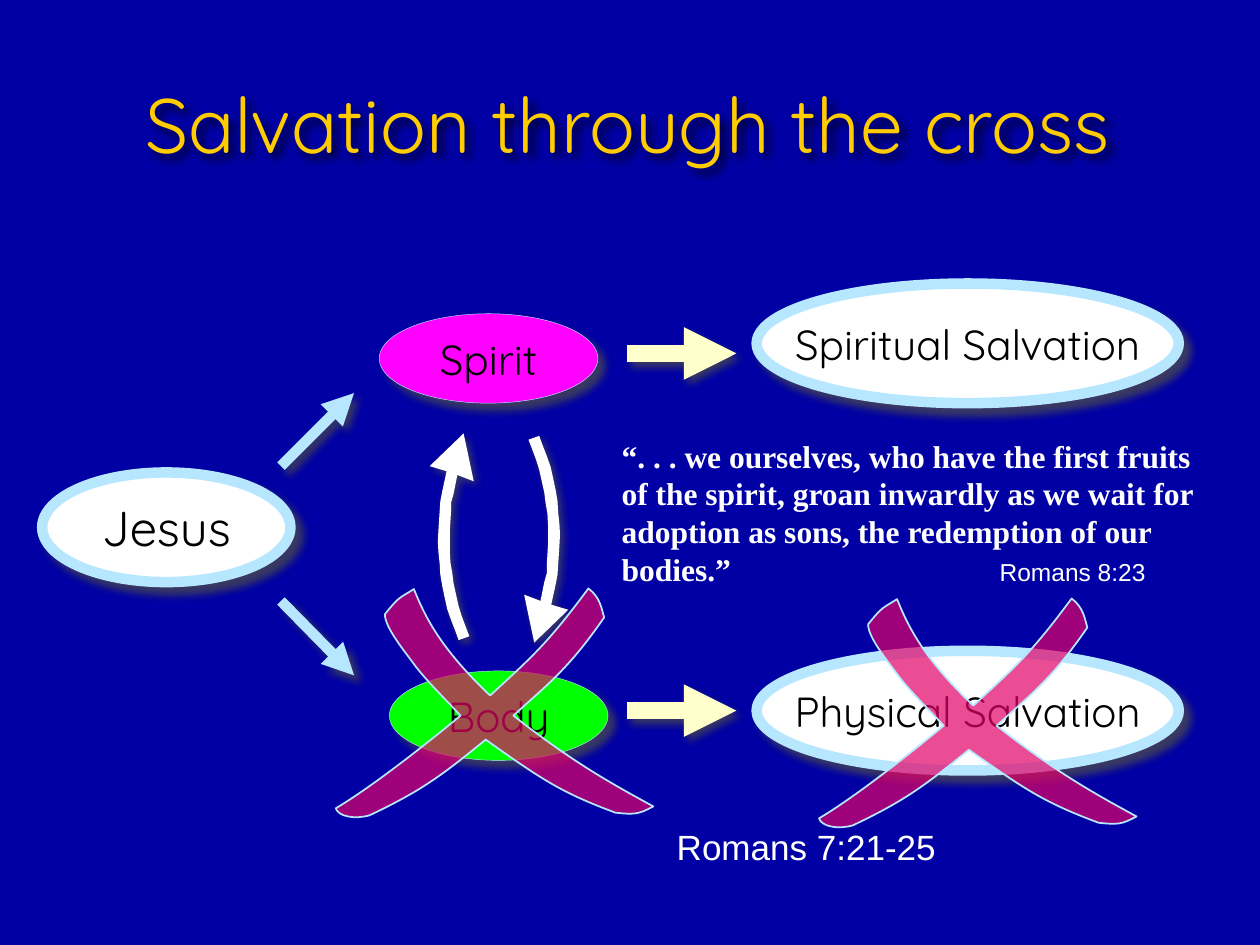
from lxml.etree import SubElement
from pptx import Presentation
from pptx.dml.color import RGBColor
from pptx.enum.shapes import MSO_CONNECTOR, MSO_SHAPE
from pptx.enum.text import MSO_ANCHOR, MSO_AUTO_SIZE, PP_ALIGN
from pptx.oxml.ns import qn
from pptx.util import Inches, Pt

COLUMNS, ROWS = 100, 75
CELL = Inches(0.1)
SKY, WHITE, CREAM, BLACK = "B7E7FF", "FFFFFF", "FFFFCC", "000000"
ROUND_FONT = "Quicksand"

ARROW_OUTLINE = [
    (36.3, 37.7), (36, 39.2), (35.8, 39.9), (35.8, 40.6), (35.7, 42.2), (35.7, 43.7),
    (35.75, 44.65), (35.9, 45.5), (36, 46.3), (36.2, 47.2), (36.4, 48.1), (36.65, 48.9),
    (36.95, 49.7), (37.25, 50.5), (36.4, 50.8), (36.15, 50.1), (35.8, 49.2), (35.5, 48.35),
    (35.3, 47.45), (35.1, 46.5), (34.95, 45.6), (34.9, 44.75), (34.8, 43.8), (34.75, 43),
    (34.8, 42.1), (34.9, 40.5), (34.95, 39.8), (35.1, 39), (35.45, 37.4), (34.1, 37),
    (36.8, 34.4), (37.6, 38.2),
]
CROSS_OUTLINE = [
    (9.9, 10.1),
    (9.9, 10.1), (3.8, 15.2), (0, 17.45), (0.2, 18.1), (1.5, 18.35), (2.7, 18),
    (6.8, 16.05), (8.35, 14.9), (11.9, 12), (16.4, 15.2), (17.9, 16.2), (22.2, 17.8),
    (23.7, 17.95), (24, 17.95), (25.2, 17.3), (22, 15.55), (18.95, 13.9), (14.1, 10.1),
    (16.5, 7.85), (18.35, 6.6), (21.3, 2.3), (21.1, 1.65), (21, 0.7), (20.05, 0),
    (16.8, 4.4), (15.5, 5.5), (12.25, 8.5), (8.35, 4.8), (7.1, 2.3), (6.2, 0.05),
    (5.05, 0.8), (5.1, 0.55), (3.9, 2.05), (3.9, 3.1), (5.4, 4.9), (6.35, 6.2),
    (7.35, 7.5), (9.2, 9.3), (9.9, 10.1),
]


def span(cells):
    """Turn grid cells into a length."""
    return round(cells * CELL)


def colour(hex_value):
    """Turn a hex string into a colour."""
    return RGBColor.from_string(hex_value)


def paint(fill, hex_value):
    """Fill solidly with one colour."""
    fill.solid()
    fill.fore_color.rgb = colour(hex_value)


def set_alpha(parent, percent):
    """Add an opacity to a colour element."""
    SubElement(parent, qn("a:alpha"), val=str(percent * 1000))


def cast_shadow(owner, distance, angle=45, tint="4D4D4D"):
    """Give a shape or connector a soft outer shadow."""
    effects = SubElement(owner._element.spPr, qn("a:effectLst"))
    outer = SubElement(effects, qn("a:outerShdw"), blurRad=str(Pt(5)), dist=str(Pt(distance)),
                       dir=str(angle * 60000), algn="ctr", rotWithShape="0")
    set_alpha(SubElement(outer, qn("a:srgbClr"), val=tint), 75)


def write(paragraph, wording, hex_value, **formats):
    """Add a run with the given font values."""
    run = paragraph.add_run()
    run.text = wording
    run.font.color.rgb = colour(hex_value)
    for key, value in formats.items():
        setattr(run.font, key, value)


def text_box(slide, area, **formats):
    """Add a text box and return it with its first paragraph."""
    box = slide.shapes.add_textbox(*map(span, area))
    for key, value in formats.items():
        setattr(box.text_frame, key, value)
    return box, box.text_frame.paragraphs[0]


def bubble(slide, wording, area, size=24, fill=WHITE, border=6):
    """Add a labelled ellipse."""
    ellipse = slide.shapes.add_shape(MSO_SHAPE.OVAL, *map(span, area))
    paint(ellipse.fill, fill)
    paint(ellipse.line.fill, SKY)
    ellipse.line.width = Pt(border)
    cast_shadow(ellipse, 5.7)
    frame = ellipse.text_frame
    frame.word_wrap = False
    frame.vertical_anchor = MSO_ANCHOR.MIDDLE
    frame.paragraphs[0].alignment = PP_ALIGN.CENTER
    write(frame.paragraphs[0], wording, BLACK, size=Pt(size), name=ROUND_FONT)


def straight_arrow(slide, ends, hex_value, width, distance, angle=45):
    """Add a line with an arrowhead at its end."""
    arrow = slide.shapes.add_connector(MSO_CONNECTOR.STRAIGHT, *map(span, ends))
    paint(arrow.line.fill, hex_value)
    arrow.line.width = Pt(width)
    SubElement(arrow.line._ln, qn("a:tailEnd"), type="triangle")
    cast_shadow(arrow, distance, angle)


def outline(shapes, points, fill):
    """Add a closed, filled polygon."""
    corners = [(span(x), span(y)) for x, y in points]
    builder = shapes.build_freeform(*corners[0])
    builder.add_line_segments(corners[1:], close=True)
    shape = builder.convert_to_shape()
    paint(shape.fill, fill)
    return shape


def curved_arrow(shapes, points):
    """Add a white curved block arrow."""
    arrow = outline(shapes, points, WHITE)
    arrow.line.fill.background()
    cast_shadow(arrow, 2.8)


def bend(shape):
    """Turn each three straight segments of an outline into one curve."""
    segments = list(shape._element.iter(qn("a:lnTo")))
    for first, second, end in zip(*[iter(segments)] * 3):
        first.tag = qn("a:cubicBezTo")
        for segment in (second, end):
            first.append(segment[0])
            segment.getparent().remove(segment)


def cross_out(slide, left, top):
    """Add a translucent brush cross."""
    cross = outline(slide.shapes, [(left + x, top + y) for x, y in CROSS_OUTLINE], "E20267")
    bend(cross)
    set_alpha(cross.fill._xPr.find(qn("a:solidFill"))[0], 70)
    paint(cross.line.fill, SKY)
    cross.line.width = Pt(1)
    cross.shadow.inherit = False


def title(slide):
    """Add the heading with its shadow."""
    heading, paragraph = text_box(slide, (3.3, 2.5, 93.1, 14.5), word_wrap=True,
                                  vertical_anchor=MSO_ANCHOR.MIDDLE)
    paragraph.alignment = PP_ALIGN.CENTER
    write(paragraph, "Salvation through the cross", "FFCC00", size=Pt(44), name=ROUND_FONT)
    cast_shadow(heading, 2.8, tint=BLACK)


def quotation(slide):
    """Add the verse with its reference at a tab stop."""
    paragraph = text_box(slide, (48.35, 34.17, 48.3, 13), word_wrap=True,
                         auto_size=MSO_AUTO_SIZE.SHAPE_TO_FIT_TEXT)[1]
    stops = SubElement(paragraph._p.get_or_add_pPr(), qn("a:tabLst"))
    SubElement(stops, qn("a:tab"), pos=str(span(30)), algn="l")
    write(paragraph, "“. . . we ourselves, who have the first fruits of the spirit, groan inwardly "
          "as we wait for adoption as sons, the redemption of our bodies.” \t", WHITE,
          size=Pt(18), name="Times New Roman", bold=True)
    write(paragraph, "Romans 8:23", WHITE, size=Pt(14), name="Arial", bold=False)


def reference(slide):
    """Add the closing reference."""
    paragraph = text_box(slide, (52.7, 65, 22.6, 4.3), word_wrap=False,
                         auto_size=MSO_AUTO_SIZE.SHAPE_TO_FIT_TEXT)[1]
    paragraph.alignment = PP_ALIGN.CENTER
    write(paragraph, "Romans 7:21-25", WHITE, size=Pt(20), name="Arial")


def main():
    """Build and save the slide."""
    deck = Presentation()
    deck.slide_width, deck.slide_height = span(COLUMNS), span(ROWS)
    slide = deck.slides.add_slide(deck.slide_layouts[6])
    paint(slide.background.fill, "0000A4")
    title(slide)
    bubble(slide, "Jesus", (3.35, 37.5, 19.7, 8.7), size=28)
    bubble(slide, "Spirit", (30.1, 24.9, 17.35, 7.1), fill="FF00FF", border=0.25)
    bubble(slide, "Body", (30.9, 53.25, 17.35, 7.1), fill="00FF00", border=0.25)
    cycle = slide.shapes.add_group_shape().shapes
    curved_arrow(cycle, ARROW_OUTLINE)
    curved_arrow(cycle, [(79.2 - x, 85.4 - y) for x, y in ARROW_OUTLINE])
    for wording, top in (("Spiritual Salvation", 22.5), ("Physical Salvation", 51.65)):
        bubble(slide, wording, (60.05, top, 33.5, 9.5))
    straight_arrow(slide, (22.3, 47.7, 28.1, 53.6), SKY, 6, 5.7)
    straight_arrow(slide, (22.3, 37, 28.1, 31.2), SKY, 6, 4.2)
    for row in (28.05, 56.4):
        straight_arrow(slide, (49.8, row, 58.45, row), CREAM, 10, 3.7, angle=55)
    quotation(slide)
    reference(slide)
    for left, top in ((65, 47.5), (26.65, 46.7)):
        cross_out(slide, left, top)
    deck.save("out.pptx")


if __name__ == "__main__":
    main()
